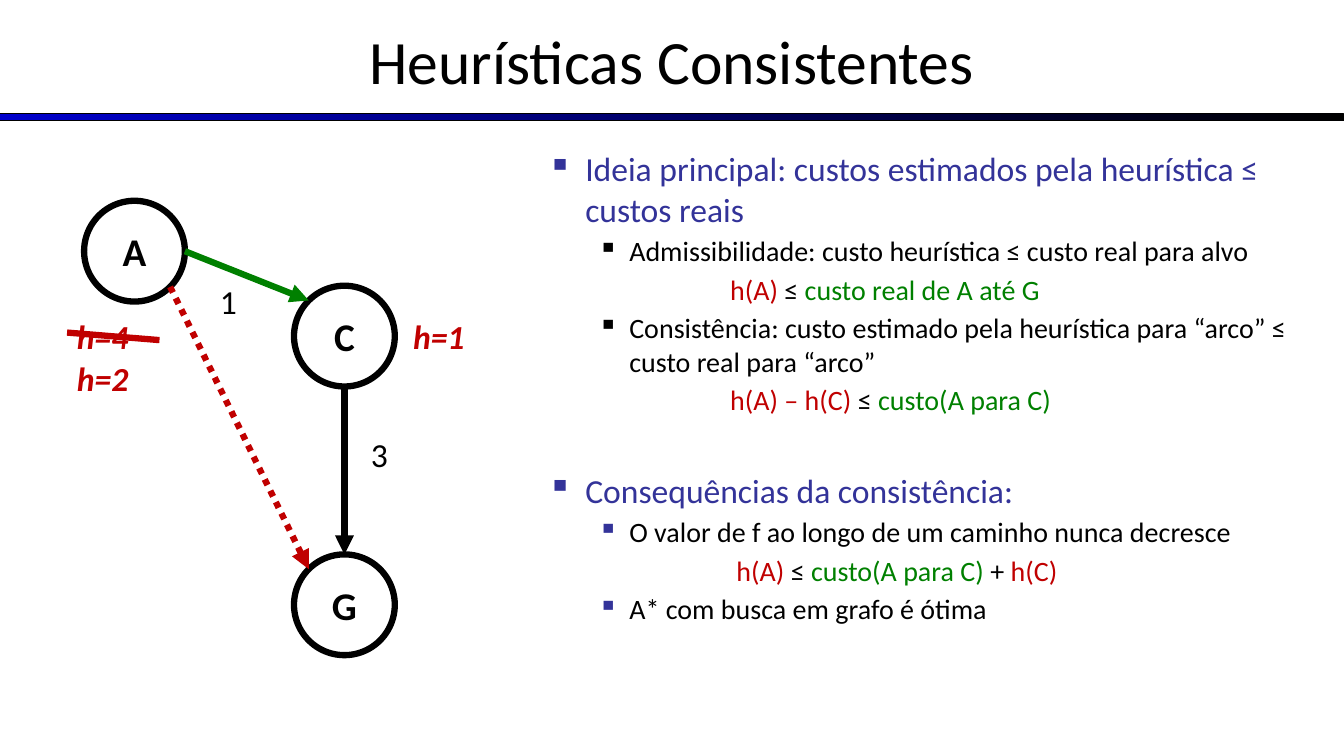
from dataclasses import dataclass
from math import cos, radians, sin

from lxml import etree
from pptx import Presentation
from pptx.dml.color import RGBColor
from pptx.enum.dml import MSO_LINE
from pptx.enum.shapes import MSO_CONNECTOR, MSO_SHAPE
from pptx.enum.text import MSO_ANCHOR, PP_ALIGN
from pptx.oxml.ns import qn
from pptx.util import Cm, Pt

STRAIGHT = MSO_CONNECTOR.STRAIGHT
RECTANGLE, OVAL = MSO_SHAPE.RECTANGLE, MSO_SHAPE.OVAL
DOTTED = MSO_LINE.ROUND_DOT
MIDDLE, CENTER = MSO_ANCHOR.MIDDLE, PP_ALIGN.CENTER

COLORS = {
    "black": "000000",
    "white": "FFFFFF",
    "blue": "0000CC",
    "indigo": "333399",
    "red": "C00000",
    "green": "008000",
}
FONT = "Calibri"
PAGE_WIDTH, PAGE_HEIGHT = 33.87, 19.05
DIAMETER = 2.54
STROKE = 4.5


@dataclass(frozen=True)
class Node:
    name: str
    left: float
    top: float

    def rim(self, degrees: float) -> tuple[float, float]:
        radius, angle = DIAMETER / 2, radians(degrees)
        return (self.left + radius * (1 + cos(angle)),
                self.top + radius * (1 + sin(angle)))


@dataclass(frozen=True)
class Stroke:
    start: tuple[float, float]
    end: tuple[float, float]
    color: str
    arrow: bool = True
    dotted: bool = False


@dataclass(frozen=True)
class Label:
    text: str
    left: float
    top: float
    width: float
    color: str = "black"
    strong: bool = False


@dataclass(frozen=True)
class Level:
    size: int
    margin: float
    hanging: float
    before: float


@dataclass(frozen=True)
class Line:
    level: Level
    spans: tuple[tuple[str, str], ...]
    bullet: str = ""
    extra_before: float = 0


TOPIC = Level(24, 0.95, 0.95, 4.3)
POINT = Level(20, 2.06, 0.79, 3.5)
FORMULA = Level(20, 4.6, 0, 3.5)

A = Node("A", 2.12, 5.06)
C = Node("C", 7.41, 7.2)
G = Node("G", 7.41, 13.97)

STROKES = [
    Stroke(C.rim(90), G.rim(270), "black"),
    Stroke(A.rim(45), G.rim(225), "red", dotted=True),
    Stroke(A.rim(0), C.rim(225), "green"),
    Stroke((1.69, 8.38), (4.02, 8.57), "red", arrow=False),
]
LABELS = [
    Label("1", 5.29, 6.96, 0.94),
    Label("3", 9.1, 10.8, 0.94),
    Label("h=4", 1.69, 7.83, 2.03, "red", True),
    Label("h=2", 1.69, 8.89, 2.03, "red", True),
    Label("h=1", 10.16, 7.83, 2.03, "red", True),
]
LINES = [
    Line(TOPIC, (("Ideia principal: custos estimados pela heurística ≤ custos reais", "indigo"),), "indigo"),
    Line(POINT, (("Admissibilidade: custo heurística ≤ custo real para alvo", "black"),), "black"),
    Line(FORMULA, (("h(A) ", "red"), ("≤ ", "black"), ("custo real de A até G", "green"))),
    Line(POINT, (("Consistência: custo estimado pela heurística para “arco” ≤ custo real para “arco”", "black"),),
         "black"),
    Line(FORMULA, (("h(A) – h(C) ", "red"), ("≤ ", "black"), ("custo(A para C)", "green"))),
    Line(TOPIC, (("Consequências da consistência:", "indigo"),), "indigo", 33.6),
    Line(POINT, (("O valor de f ao longo de um caminho nunca decresce", "black"),), "indigo"),
    Line(FORMULA, ((" h(A) ", "red"), ("≤ ", "black"), ("custo(A para C) ", "green"),
                   ("+ ", "black"), ("h(C)", "red"))),
    Line(POINT, (("A* com busca em grafo é ótima", "black"),), "indigo"),
]


def rgb(color: str) -> RGBColor:
    return RGBColor.from_string(COLORS[color])


def style(para, size: float, color: str, bold: bool = False, italic: bool = False) -> None:
    font = para.font
    font.name, font.size, font.bold, font.italic = FONT, Pt(size), bold, italic
    font.color.rgb = rgb(color)


def add_box(page, left: float, top: float, width: float, height: float, wrap: bool = True):
    box = page.shapes.add_textbox(Cm(left), Cm(top), Cm(width), Cm(height))
    box.text_frame.word_wrap = wrap
    return box.text_frame


def add_title(page, text: str) -> None:
    frame = add_box(page, 0, -0.08, PAGE_WIDTH, 3.18)
    frame.vertical_anchor = MIDDLE
    para = frame.paragraphs[0]
    para.text, para.alignment = text, CENTER
    style(para, 44, "black")


def add_rule(page) -> None:
    rule = page.shapes.add_shape(RECTANGLE, 0, Cm(2.87), Cm(PAGE_WIDTH), Cm(0.18))
    rule.shadow.inherit = False
    rule.fill.gradient()
    rule.fill.gradient_angle = 0
    for stop, color in zip(rule.fill.gradient_stops, ("blue", "black")):
        stop.color.rgb = rgb(color)
    rule.line.color.rgb = rgb("black")
    rule.line.width = Pt(0.75)


def add_node(page, node: Node) -> None:
    circle = page.shapes.add_shape(OVAL, Cm(node.left), Cm(node.top), Cm(DIAMETER), Cm(DIAMETER))
    circle.shadow.inherit = False
    circle.fill.solid()
    circle.fill.fore_color.rgb = rgb("white")
    circle.line.color.rgb = rgb("black")
    circle.line.width = Pt(STROKE)
    circle.text_frame.vertical_anchor = MIDDLE
    para = circle.text_frame.paragraphs[0]
    para.text, para.alignment = node.name, CENTER
    style(para, 28, "black", bold=True)


def add_stroke(page, stroke: Stroke) -> None:
    ends = [Cm(value) for value in (*stroke.start, *stroke.end)]
    connector = page.shapes.add_connector(STRAIGHT, *ends)
    connector.line.color.rgb = rgb(stroke.color)
    connector.line.width = Pt(STROKE)
    if stroke.dotted:
        connector.line.dash_style = DOTTED
    properties = connector._element.spPr
    if stroke.arrow:
        etree.SubElement(properties.find(qn("a:ln")), qn("a:tailEnd"), type="triangle")
    etree.SubElement(properties, qn("a:effectLst"))


def add_label(page, label: Label) -> None:
    para = add_box(page, label.left, label.top, label.width, 1.27, wrap=False).paragraphs[0]
    para.text = label.text
    style(para, 24, label.color, label.strong, label.strong)


def add_lines(page, lines: list[Line]) -> None:
    frame = add_box(page, 13.55, 3.61, 19.25, 8.46)
    for index, line in enumerate(lines):
        para = frame.add_paragraph() if index else frame.paragraphs[0]
        level = line.level
        properties = para._p.get_or_add_pPr()
        properties.set("marL", str(Cm(level.margin)))
        properties.set("indent", str(-Cm(level.hanging)))
        if line.bullet:
            bullet_color = etree.SubElement(properties, qn("a:buClr"))
            etree.SubElement(bullet_color, qn("a:srgbClr"), val=COLORS[line.bullet])
            etree.SubElement(properties, qn("a:buChar"), char="▪")
        para.space_before = Pt(level.before + line.extra_before)
        para.font.name, para.font.size = FONT, Pt(level.size)
        for text, color in line.spans:
            span = para.add_run()
            span.text = text
            span.font.color.rgb = rgb(color)


def main() -> None:
    deck = Presentation()
    deck.slide_width, deck.slide_height = Cm(PAGE_WIDTH), Cm(PAGE_HEIGHT)
    page = deck.slides.add_slide(deck.slide_layouts[6])
    add_rule(page)
    add_title(page, "Heurísticas Consistentes")
    add_lines(page, LINES)
    for node in (A, C, G):
        add_node(page, node)
    for label in LABELS:
        add_label(page, label)
    for stroke in STROKES:
        add_stroke(page, stroke)
    deck.save("out.pptx")


if __name__ == "__main__":
    main()
